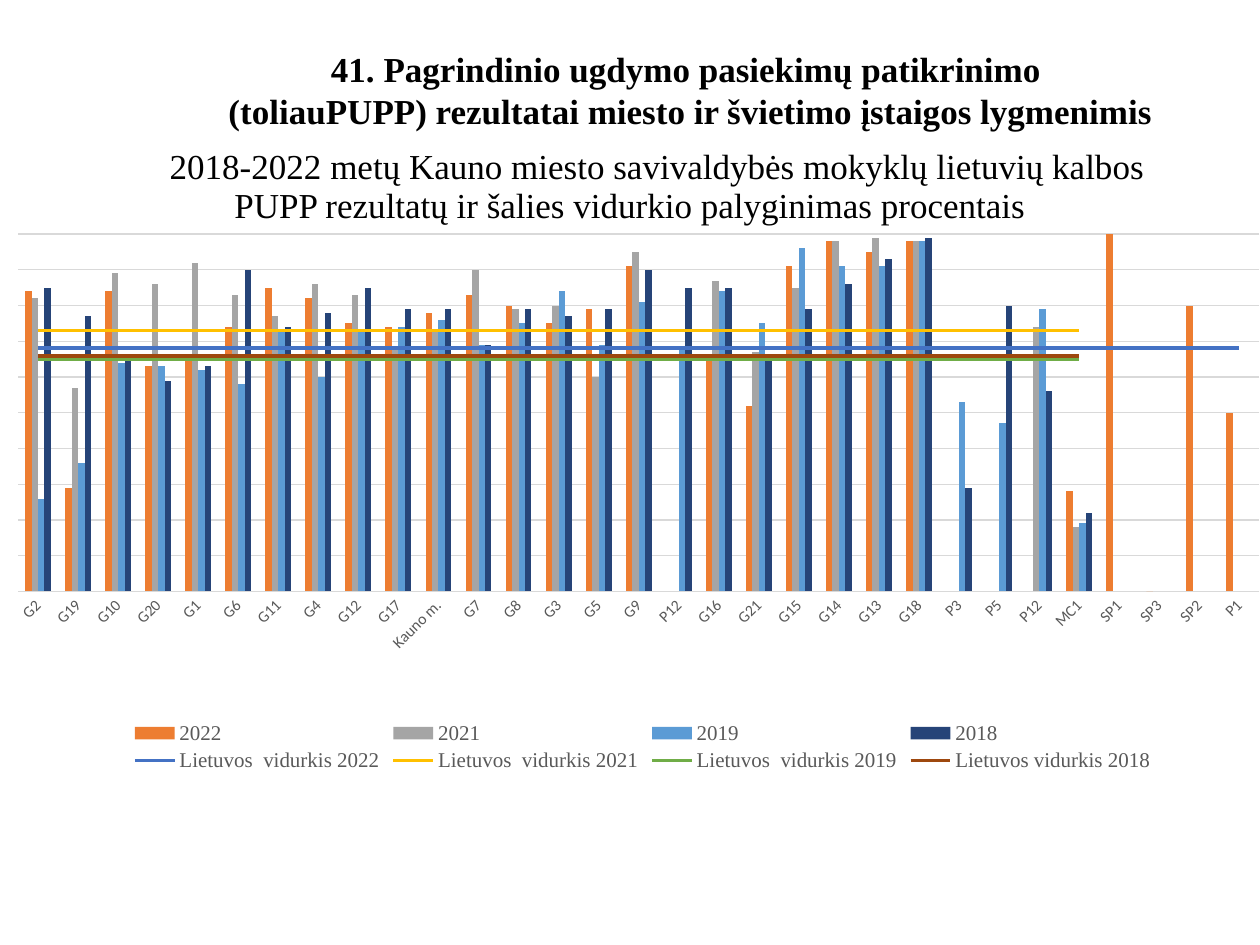
from lxml import etree
from pptx import Presentation
from pptx.chart.data import CategoryChartData
from pptx.dml.color import RGBColor
from pptx.enum.chart import (XL_CHART_TYPE as CT, XL_LEGEND_POSITION as LP,
                             XL_MARKER_STYLE as MS, XL_TICK_MARK as TM)
from pptx.enum.text import MSO_ANCHOR, PP_ALIGN
from pptx.oxml import parse_xml
from pptx.oxml.ns import nsdecls, qn
from pptx.util import Inches, Pt

BLACK = RGBColor(0x00, 0x00, 0x00)
GREY = RGBColor(0x59, 0x59, 0x59)
GRID = RGBColor(0xD9, 0xD9, 0xD9)
SERIF, SANS = "Times New Roman", "Calibri"
W, H = 10, 7.5

SCHOOLS = ("G2,G19,G10,G20,G1,G6,G11,G4,G12,G17,Kauno m.,G7,G8,G3,G5,G9,P12,G16,"
           "G21,G15,G14,G13,G18,P3,P5,P12,MC1,SP1,SP3,SP2,P1").split(",")
N = len(SCHOOLS)
SHORT = N - 4  # the earlier years have no SP or P1 schools

# Yearly results: name, colour, values
RESULTS = [
    ("2022", RGBColor(0xED, 0x7D, 0x31),
     [84, 29, 84, 63, 66, 74, 85, 82, 75, 74, 78, 83, 80, 75, 79, 91, None, 65, 52,
      91, 98, 95, 98, None, None, None, 28, 100, 0, 80, 50]),
    ("2021", RGBColor(0xA5, 0xA5, 0xA5),
     [82, 57, 89, 86, 92, 83, 77, 86, 83, 68, 73, 90, 79, 80, 60, 95, None, 87, 67,
      85, 98, 99, 98, None, None, 74, 18]),
    ("2019", RGBColor(0x5B, 0x9B, 0xD5),
     [26, 36, 64, 63, 62, 58, 73, 60, 73, 74, 76, 69, 75, 84, 69, 81, 68, 84, 75,
      96, 91, 91, 98, 53, 47, 79, 19]),
    ("2018", RGBColor(0x26, 0x44, 0x78),
     [85, 77, 66, 59, 63, 90, 74, 78, 85, 79, 79, 69, 79, 77, 79, 90, 85, 85, 66,
      79, 86, 93, 99, 29, 80, 56, 22]),
]
# National averages: name, colour, constant values
AVERAGES = [
    ("Lietuvos  vidurkis 2022", RGBColor(0x44, 0x72, 0xC4), [68] * N),
    ("Lietuvos  vidurkis 2021", RGBColor(0xFF, 0xC0, 0x00), [73] * SHORT),
    ("Lietuvos  vidurkis 2019", RGBColor(0x70, 0xAD, 0x47), [65] * SHORT),
    ("Lietuvos vidurkis 2018", RGBColor(0x9E, 0x48, 0x0E), [66] * SHORT),
]


def share(left, top, width, height):
    """Box in EMU from shares of the slide's size."""
    return [Inches(v) for v in (left * W, top * H, width * W, height * H)]


def style_font(font, size, color, name, bold=False):
    font.size, font.name, font.bold = Pt(size), name, bold
    font.color.rgb = color


def add_text(slide, box, paragraphs, bold=False, wrap=True, spacing=None):
    """Centred text; each paragraph is a list of (text, size) runs."""
    tf = slide.shapes.add_textbox(*box).text_frame
    tf.word_wrap = wrap
    tf.vertical_anchor = MSO_ANCHOR.MIDDLE
    for i, runs in enumerate(paragraphs):
        p = tf.add_paragraph() if i else tf.paragraphs[0]
        p.alignment = PP_ALIGN.CENTER
        p.line_spacing = spacing
        for text, size in runs:
            r = p.add_run()
            r.text = text
            style_font(r.font, size, BLACK, SERIF, bold)


def move_to_lines(chart, first):
    """Move the series from index first on into a line plot on the same axes."""
    bars = chart.plots[0]._element
    lines = parse_xml(f'<c:lineChart {nsdecls("c")}><c:grouping val="standard"/>'
                      '<c:varyColors val="0"/></c:lineChart>')
    for ser in bars.findall(qn("c:ser"))[first:]:
        for flag in ser.findall(qn("c:invertIfNegative")):
            ser.remove(flag)
        lines.append(ser)
    etree.SubElement(lines, qn("c:marker")).set("val", "1")
    for ax in bars.findall(qn("c:axId")):
        etree.SubElement(lines, qn("c:axId")).set("val", ax.get("val"))
    bars.addnext(lines)


def set_plot_layout(chart, x, y, w, h):
    """Fix the inner plot area as shares of the chart."""
    area = chart._chartSpace.chart.plotArea
    for old in area.findall(qn("c:layout")):
        area.remove(old)
    parts = "".join(f'<c:{k} val="{v}"/>' for k, v in (
        ("layoutTarget", "inner"), ("xMode", "edge"), ("yMode", "edge"),
        ("x", x), ("y", y), ("w", w), ("h", h)))
    area.insert(0, parse_xml(f'<c:layout {nsdecls("c")}><c:manualLayout>{parts}'
                             '</c:manualLayout></c:layout>'))


def style_axes(chart):
    cat, val = chart.category_axis, chart.value_axis
    cat.major_tick_mark = cat.minor_tick_mark = TM.NONE
    style_font(cat.tick_labels.font, 9, GREY, SANS)
    cat._element.find(qn("c:txPr")).find(qn("a:bodyPr")).set("rot", "-2700000")
    val.minimum_scale, val.maximum_scale = 0, 100
    val.has_major_gridlines = True
    val.tick_labels.number_format = "0.00%"
    val.tick_labels.number_format_is_linked = False
    val.visible = False
    for line in (cat.format.line, val.major_gridlines.format.line):
        line.color.rgb, line.width = GRID, Pt(0.75)


def add_results_chart(slide, box):
    data = CategoryChartData(number_format="General")
    data.categories = SCHOOLS
    for name, _, values in RESULTS + AVERAGES:
        data.add_series(name, values + [None] * (N - len(values)))
    chart = slide.shapes.add_chart(CT.COLUMN_CLUSTERED, *box, data).chart
    chart.has_title = False
    style_font(chart.font, 10, BLACK, SANS)
    move_to_lines(chart, len(RESULTS))
    set_plot_layout(chart, 0.014, 0.001, 0.966, 0.658)
    style_axes(chart)

    # Columns and average lines
    columns, lines = chart.plots
    columns.gap_width = 219
    columns.vary_by_categories = False
    for s, (_, color, _) in zip(columns.series, RESULTS):
        s.format.fill.solid()
        s.format.fill.fore_color.rgb = color
    for s, (_, color, _) in zip(lines.series, AVERAGES):
        s.format.line.color.rgb, s.format.line.width = color, Pt(2.25)
        s.marker.style = MS.NONE
        s.smooth = False

    # Legend
    chart.has_legend = True
    chart.legend.position = LP.BOTTOM
    chart.legend.include_in_layout = False
    style_font(chart.legend.font, 12, GREY, SERIF)


def main():
    prs = Presentation()
    prs.slide_width, prs.slide_height = Inches(W), Inches(H)
    slide = prs.slides.add_slide(prs.slide_layouts[6])

    # Subtitle, chart and heading
    add_text(slide, share(0.069, 0.143, 0.862, 0.104), [[
        ("\t", 24),
        ("2018-2022 metų Kauno miesto savivaldybės mokyklų lietuvių kalbos  PUPP "
         "rezultatų ir šalies vidurkio palyginimas procentais", 20)]], spacing=0.9)
    add_results_chart(slide, share(0, 0.247, 1.02, 0.575))
    add_text(slide, share(0.169, 0.043, 0.758, 0.103), [
        [("41. Pagrindinio ugdymo pasiekimų patikrinimo ", 20)],
        [("(toliauPUPP) rezultatai miesto ir švietimo įstaigos lygmenimis", 20)],
    ], bold=True, wrap=False)
    prs.save("out.pptx")


if __name__ == "__main__":
    main()
